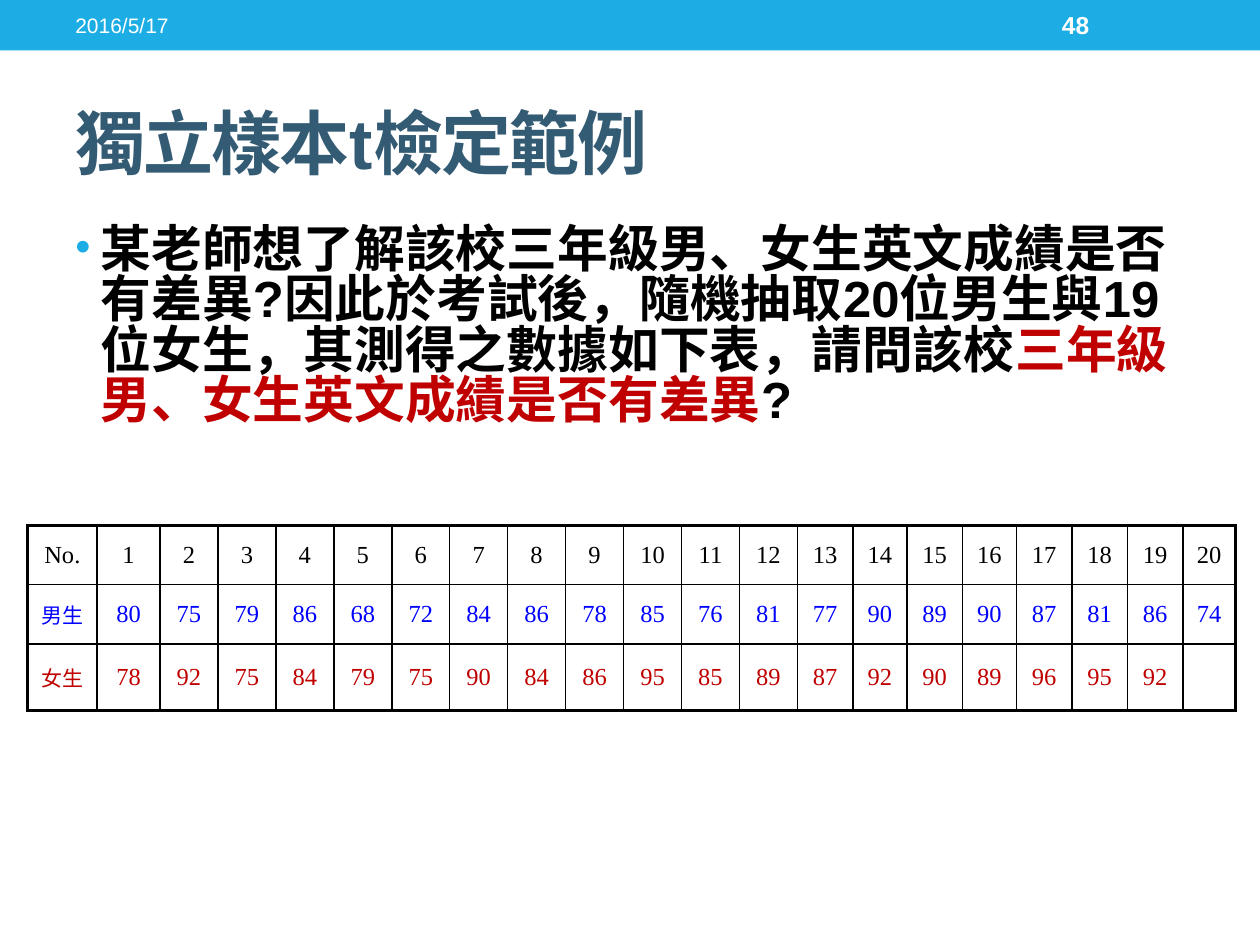
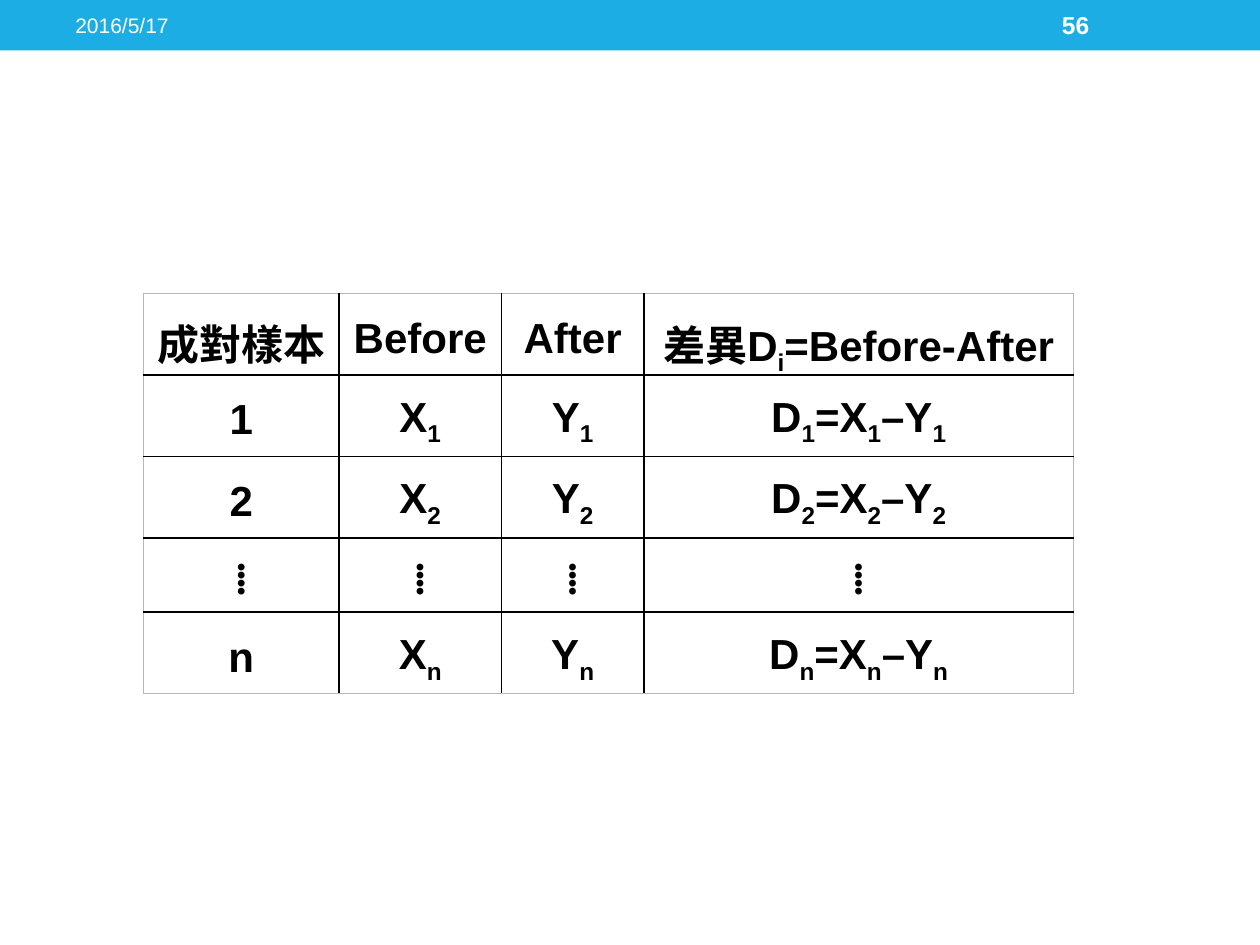
import pptx
import pptx.util
import pptx.dml.color
import pptx.enum.shapes
import pptx.enum.text
import pptx.oxml
import pptx.oxml.ns
from pptx.util import Inches, Pt

RGBColor = pptx.dml.color.RGBColor
BAND = RGBColor(0x1C, 0xAD, 0xE4)
TITLE = RGBColor(0x33, 0x5B, 0x74)
WHITE = RGBColor(0xFF, 0xFF, 0xFF)
BLACK = RGBColor(0x00, 0x00, 0x00)
RED = RGBColor(0xC0, 0x00, 0x00)
BLUE = RGBColor(0x00, 0x00, 0xFF)
GREY = RGBColor(0xB8, 0xB8, 0xB8)
SANS, SERIF = "Arial", "Times New Roman"
MIDDLE = pptx.enum.text.MSO_ANCHOR.MIDDLE
CENTER = pptx.enum.text.PP_ALIGN.CENTER


def element(xml):
    return pptx.oxml.parse_xml(xml.replace(">", f" {pptx.oxml.ns.nsdecls('a')}>", 1))


class Deck:
    """Holds the shared style and the slide being built."""

    def __init__(self):
        self.prs = pptx.Presentation()
        self.prs.slide_width, self.prs.slide_height = Inches(10), Inches(7.5)

    def slide(self, number):
        self.s = self.prs.slides.add_slide(self.prs.slide_layouts[6])
        # Top band with date and slide number
        sp = self.s.shapes.add_shape(pptx.enum.shapes.MSO_SHAPE.RECTANGLE,
                                     0, 0, Inches(10), Inches(0.4))
        sp.shadow.inherit = False
        sp.fill.solid()
        sp.fill.fore_color.rgb = BAND
        sp.line.fill.background()
        self.text("2016/5/17", 0.5, 0.02, 3.17, 0.36, 12, WHITE)
        self.text(str(number), 8.33, 0.02, 1.17, 0.36, 14, WHITE, bold=True)

    def font(self, p, size, color, bold=False, name=SANS):
        p.font.size, p.font.bold, p.font.name = Pt(size), bold, name
        if color is not None:
            p.font.color.rgb = color

    def box(self, left, top, width, height):
        tf = self.s.shapes.add_textbox(Inches(left), Inches(top),
                                       Inches(width), Inches(height)).text_frame
        tf.word_wrap = True
        return tf

    def text(self, text, left, top, width, height, size, color, bold=False):
        tf = self.box(left, top, width, height)
        tf.vertical_anchor = MIDDLE
        p = tf.paragraphs[0]
        p.add_run().text = text
        self.font(p, size, color, bold)
        return p

    def title(self, text):
        p = self.text(text, 0.5, 0.58, 9, 1.08, 40, TITLE, bold=True)
        p.runs[0]._r.get_or_add_rPr().set("spc", "-100")

    def bullet(self, parts):
        p = self.box(0.5, 1.75, 9, 5.33).paragraphs[0]
        self.font(p, 29, None, bold=True)
        p.space_before, p.line_spacing = Pt(3.5), 0.83
        for text, color in parts:
            r = p.add_run()
            r.text = text
            r.font.color.rgb = color
        pPr = p._p.get_or_add_pPr()
        pPr.set("marL", str(Inches(0.2)))
        pPr.set("indent", str(Inches(-0.2)))
        marks = (f'<a:buClr><a:srgbClr val="{BAND}"/></a:buClr>',
                 '<a:buSzPct val="85000"></a:buSzPct>',
                 '<a:buFont typeface="Arial"></a:buFont>',
                 '<a:buChar char="•"></a:buChar>')
        defaults = pPr.find(pptx.oxml.ns.qn("a:defRPr"))
        for mark in marks:
            defaults.addprevious(element(mark))

    def table(self, left, top, cols, heights, rows, edge, style):
        """style(row, col) gives the font arguments of a cell; edge is (color, points)."""
        gf = self.s.shapes.add_table(len(rows), len(cols), Inches(left), Inches(top),
                                     Inches(sum(cols)), Inches(sum(heights)))
        table = gf.table
        table.first_row = table.horz_banding = False
        for column, width in zip(table.columns, cols):
            column.width = Inches(width)
        for row, height in zip(table.rows, heights):
            row.height = Inches(height)
        for i, row in enumerate(rows):
            for j, text in enumerate(row):
                cell = table.cell(i, j)
                cell.vertical_anchor = MIDDLE
                cell.fill.background()
                outer = (j == 0, j == len(cols) - 1, i == 0, i == len(rows) - 1)
                self.borders(cell, outer, edge)
                p = cell.text_frame.paragraphs[0]
                p.alignment = CENTER
                self.subscripted(p, text)
                self.font(p, **style(i, j))
        return table

    def borders(self, cell, outer, edge):
        tcPr = cell._tc.get_or_add_tcPr()
        for k, (side, is_outer) in enumerate(zip("LRTB", outer)):
            color, width = edge if is_outer else (BLACK, 1)
            tcPr.insert(k, element(
                f'<a:ln{side} w="{Pt(width)}"><a:solidFill><a:srgbClr val="{color}"/>'
                f'</a:solidFill></a:ln{side}>'))

    def subscripted(self, p, text):
        """The character after each underscore is set as a subscript."""
        first, *rest = text.split("_")
        pieces = [(first, False)]
        for part in rest:
            pieces += [(part[0], True), (part[1:], False)]
        for piece, lowered in pieces:
            if piece:
                r = p.add_run()
                r.text = piece
                if lowered:
                    r._r.get_or_add_rPr().set("baseline", "-25000")


def scores_slide(deck):
    deck.slide(48)
    deck.title("獨立樣本t檢定範例")
    deck.bullet([
        ("某老師想了解該校三年級男、女生英文成績是否有差異?因此於考試後，"
         "隨機抽取20位男生與19位女生，其測得之數據如下表，請問該校", BLACK),
        ("三年級男、女生英文成績是否有差異", RED),
        ("?", BLACK)])

    # Scores of both groups
    boys = "80 75 79 86 68 72 84 86 78 85 76 81 77 90 89 90 87 81 86 74"
    girls = "78 92 75 84 79 75 90 84 86 95 85 89 87 92 90 89 96 95 92"
    rows = [["No.", *map(str, range(1, 21))],
            ["男生", *boys.split()],
            ["女生", *girls.split(), ""]]
    cols = [0.55, 0.5] + [0.46] * 11 + [0.44, 0.43] * 2 + [0.44] * 3 + [0.42]
    colors = (BLACK, BLUE, RED)
    deck.table(0.22, 4.17, cols, [0.47, 0.47, 0.53], rows, (BLACK, 2.25),
               lambda i, j: dict(size=12 if i and not j else 14,
                                 color=colors[i], name=SERIF))


def pairs_slide(deck):
    deck.slide(56)
    # Paired samples and their differences
    rows = [["成對樣本", "Before", "After", "差異D_i=Before-After"]]
    for n in ("1", "2", "⁞", "n"):
        rows.append([n] * 4 if n == "⁞" else
                    [n, f"X_{n}", f"Y_{n}", f"D_{n}=X_{n}–Y_{n}"])
    table = deck.table(1.14, 2.33, [1.55, 1.29, 1.13, 3.41], [0.59] * 5, rows, (GREY, 1),
                       lambda i, j: dict(size=24, color=BLACK, bold=True,
                                         name=SERIF if i == 3 else SANS))
    for cell in table.iter_cells():
        p = cell.text_frame.paragraphs[0]
        p.line_spacing, p.space_before = 1.2, Pt(4.8)


def main():
    deck = Deck()
    scores_slide(deck)
    pairs_slide(deck)
    deck.prs.save("out.pptx")


if __name__ == "__main__":
    main()
